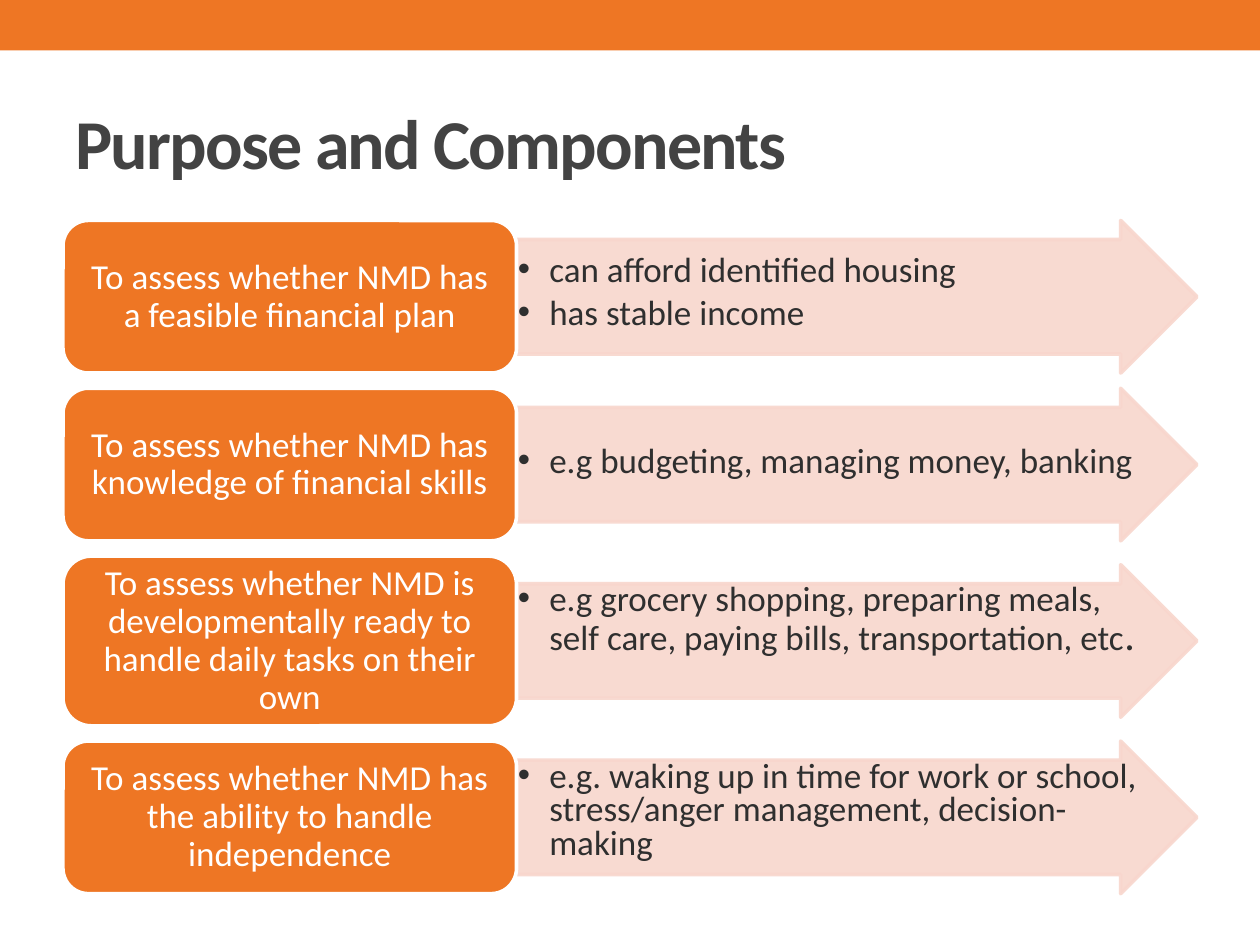
from lxml import etree
from pptx import Presentation
from pptx.dml.color import RGBColor
from pptx.enum.shapes import MSO_SHAPE
from pptx.enum.text import MSO_ANCHOR, PP_ALIGN
from pptx.oxml.ns import qn
from pptx.util import Pt

RECTANGLE = MSO_SHAPE.RECTANGLE
ROUNDED = MSO_SHAPE.ROUNDED_RECTANGLE
ARROW = MSO_SHAPE.RIGHT_ARROW
TOP, MIDDLE = MSO_ANCHOR.TOP, MSO_ANCHOR.MIDDLE
LEFT, CENTER = PP_ALIGN.LEFT, PP_ALIGN.CENTER

FONT = "Calibri"
ORANGE, PINK, WHITE = "EE7624", "F8D6CD", "FFFFFF"
DARK, TITLE_GREY = "2F2F2F", "434343"

TITLE = "Purpose and Components"
ROWS = [
    {"purpose": "To assess whether NMD has a feasible financial plan",
     "components": [[("can afford identified housing", 20)],
                    [("has stable income", 20)]],
     "height": 87.2, "spacing": 0.9, "top_inset": 7},
    {"purpose": "To assess whether NMD has knowledge of financial skills",
     "components": [[("e.g budgeting, managing money, banking", 20)]],
     "height": 87.2, "spacing": 1.0, "top_inset": 18},
    {"purpose": "To assess whether NMD is developmentally ready to handle "
                "daily tasks on their own",
     "components": [[("e.g grocery shopping, preparing meals, self care, "
                      "paying bills, transportation, etc", 20), (".", 24)]],
     "height": 97, "spacing": 0.8, "top_inset": 0.7},
    {"purpose": "To assess whether NMD has the ability to handle independence",
     "components": [[("e.g. waking up in time for work or school, "
                      "stress/anger management, decision-making", 20)]],
     "height": 87.2, "spacing": 0.8, "top_inset": 0.7},
]

ROWS_TOP, ROW_GAP = 126, 8.7
BOX_LEFT, BOX_WIDTH = 36, 259.2
ARROW_WIDTH, ARROW_HEIGHT = 388.8, 87.2
BULLET_INDENT = 18


def color(value):
    return RGBColor.from_string(value)


def add_block(slide, preset, bounds, fill, line=None):
    block = slide.shapes.add_shape(preset, *map(Pt, bounds))
    block.shadow.inherit = False
    block.fill.solid()
    block.fill.fore_color.rgb = color(fill)
    if line:
        block.line.color.rgb = color(line)
        block.line.width = Pt(2.08)
    else:
        block.line.fill.background()
    return block


def set_frame(frame, anchor, left, top, right, bottom):
    settings = {
        "word_wrap": True, "vertical_anchor": anchor,
        "margin_left": Pt(left), "margin_top": Pt(top),
        "margin_right": Pt(right), "margin_bottom": Pt(bottom),
    }
    for name, value in settings.items():
        setattr(frame, name, value)


def write(paragraph, runs, ink, align, spacing=1.0, after=0, bold=False):
    settings = {"alignment": align, "line_spacing": spacing, "space_after": Pt(after)}
    for name, value in settings.items():
        setattr(paragraph, name, value)
    for text, size in runs:
        run = paragraph.add_run()
        run.text = text
        for name, value in {"name": FONT, "size": Pt(size), "bold": bold}.items():
            setattr(run.font, name, value)
        run.font.color.rgb = color(ink)


def add_bullet(paragraph):
    properties = paragraph._p.get_or_add_pPr()
    properties.set("marL", str(Pt(BULLET_INDENT)))
    properties.set("indent", str(-Pt(BULLET_INDENT)))
    etree.SubElement(properties, qn("a:buFont")).set("typeface", "Arial")
    etree.SubElement(properties, qn("a:buChar")).set("char", "•")


def add_arrow(slide, row, center):
    bounds = (BOX_LEFT + BOX_WIDTH, center - ARROW_HEIGHT / 2, ARROW_WIDTH, ARROW_HEIGHT)
    arrow = add_block(slide, ARROW, bounds, PINK, PINK)
    arrow.adjustments[0] = 0.75
    arrow.adjustments[1] = 0.5
    for tint in arrow._element.spPr.iter(qn("a:srgbClr")):
        etree.SubElement(tint, qn("a:alpha")).set("val", "90000")
    frame = arrow.text_frame
    set_frame(frame, TOP, 0.7, row["top_inset"], 0.7, 0.7)
    for index, runs in enumerate(row["components"]):
        paragraph = frame.add_paragraph() if index else frame.paragraphs[0]
        write(paragraph, runs, DARK, LEFT, row["spacing"], after=3)
        add_bullet(paragraph)


def add_purpose(slide, row, top):
    box = add_block(slide, ROUNDED, (BOX_LEFT, top, BOX_WIDTH, row["height"]), ORANGE, WHITE)
    set_frame(box.text_frame, MIDDLE, 6, 3, 6, 3)
    write(box.text_frame.paragraphs[0], [(row["purpose"], 20)], WHITE, CENTER, 0.9)


def main():
    deck = Presentation()
    deck.slide_width, deck.slide_height = Pt(720), Pt(540)
    slide = deck.slides.add_slide(deck.slide_layouts[6])
    add_block(slide, RECTANGLE, (0, 0, 720, 28.8), ORANGE)

    heading = slide.shapes.add_textbox(Pt(36), Pt(41.8), Pt(648), Pt(77.8)).text_frame
    set_frame(heading, MIDDLE, 7.2, 3.6, 7.2, 3.6)
    write(heading.paragraphs[0], [(TITLE, 40)], TITLE_GREY, LEFT, bold=True)
    heading.paragraphs[0].runs[0].font._element.set("spc", "-100")

    top = ROWS_TOP
    for row in ROWS:
        add_arrow(slide, row, top + row["height"] / 2)
        add_purpose(slide, row, top)
        top += row["height"] + ROW_GAP

    deck.save("out.pptx")


if __name__ == "__main__":
    main()
